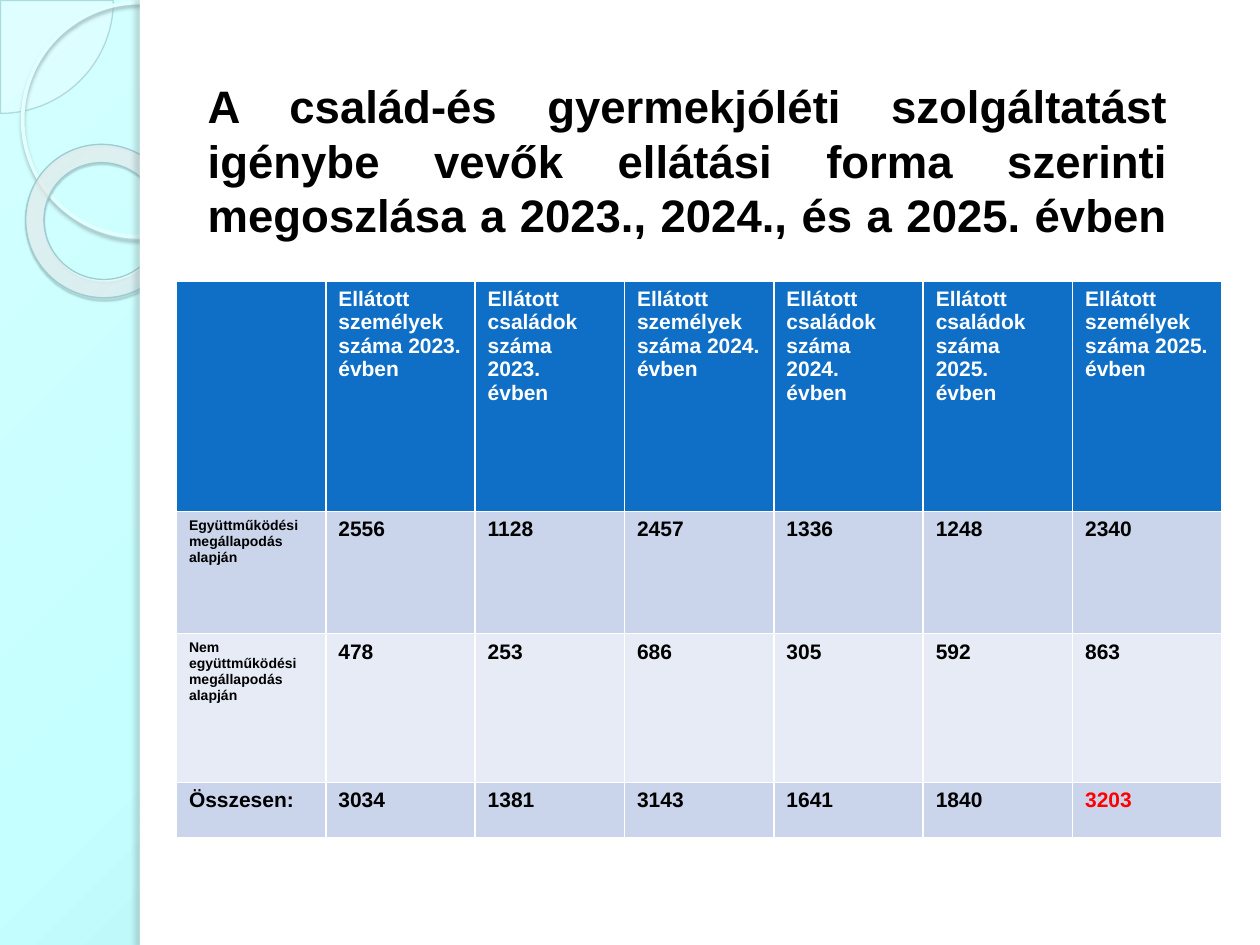
"""Build the slide on family and child welfare clients by form of care."""
from dataclasses import dataclass

from lxml import etree
from pptx import Presentation
from pptx import util as u
from pptx.dml.color import RGBColor
from pptx.enum import shapes, text
from pptx.oxml import ns


@dataclass(frozen=True)
class Theme:
    font: str = "Arial"
    title: float = 26
    body: float = 12
    small: float = 8
    black: str = "000000"
    white: str = "FFFFFF"
    red: str = "FF0000"
    head: str = "0F6FC6"
    bands: tuple = ("CAD4EA", "E6EBF5")
    back: tuple = ((0, "D4FFFF", 100), (40, "C5FFFF", 100), (100, "8FCBD3", 100))
    glass: tuple = ((0, "F7FEFE", 70), (70, "F9FEFF", 55), (100, "9CEEFD", 60))
    mist: tuple = ((0, "F5FEFF", 33), (100, "F5FEFF", 33))


def add(root, tag, **attrs):
    node = etree.SubElement(root, ns.qn(tag))
    for key, val in attrs.items():
        node.set(key, str(val))
    return node


def blend(root, stops):
    old = root.find(ns.qn("a:solidFill"))
    grad = add(root, "a:gradFill", rotWithShape=1)
    rows = add(grad, "a:gsLst")
    for pos, color, alpha in stops:
        stop = add(rows, "a:gs", pos=pos * 1000)
        tone = add(stop, "a:srgbClr", val=color)
        add(tone, "a:alpha", val=alpha * 1000)
    way = add(grad, "a:path", path="circle")
    add(way, "a:fillToRect", l=0, t=0, r=100000, b=100000)
    root.replace(old, grad)


theme = Theme()
deck = Presentation()
deck.slide_width, deck.slide_height = u.Inches(10), u.Inches(7.5)
slide = deck.slides.add_slide(deck.slide_layouts[6])
slide.background.fill.solid()
slide.background.fill.fore_color.rgb = RGBColor.from_string(theme.white)
blend(slide.element.find(".//" + ns.qn("p:bgPr")), theme.back)

kind = shapes.MSO_SHAPE
decor = [
    (kind.PIE, (-0.89, -0.89, 1.79, 1.79), (0, 54.02), 0, theme.mist, ("ADD9DF", 0.75), None),
    (kind.OVAL, (0.18, 0.02, 1.86, 1.86), (), 0, None, ("E2FFFF", 2.15), ("99B6BA", 85, 2, 2, 90)),
    (kind.DONUT, (0.2, 1.15, 1.23, 1.21), (0.12,), 38.6, theme.glass, ("9ECCD3", 0.75),
     ("465A5C", 35, 1, 1.2, 75)),
    (kind.RECTANGLE, (1.11, 0, 8.89, 7.5), (), 0, theme.white, None, None),
    (kind.RECTANGLE, (1.11, 0, 0.08, 7.5), (), 0, theme.white, None, ("687577", 25, 3, 3, 180)),
]
for form, place, bends, turn, fill, line, shade in decor:
    shape = slide.shapes.add_shape(form, *map(u.Inches, place))
    shape.rotation = turn
    for i, bend in enumerate(bends):
        shape.adjustments[i] = bend
    if fill is None:
        shape.fill.background()
    else:
        shape.fill.solid()
        shape.fill.fore_color.rgb = RGBColor.from_string(theme.white)
        if fill != theme.white:
            blend(shape.element.spPr, fill)
    if line:
        shape.line.color.rgb = RGBColor.from_string(line[0])
        shape.line.width = u.Pt(line[1])
    else:
        shape.line.fill.background()
    shape.shadow.inherit = False
    if shade:
        color, alpha, blur, dist, way = shade
        cast = add(shape.element.spPr.find(ns.qn("a:effectLst")), "a:outerShdw",
                   blurRad=u.Pt(blur), dist=u.Pt(dist), dir=way * 60000, rotWithShape=0)
        tone = add(cast, "a:srgbClr", val=color)
        add(tone, "a:alpha", val=alpha * 1000)

title = slide.shapes.add_textbox(*map(u.Inches, (1.55, 0.57, 7.82, 1.25)))
frame = title.text_frame
frame.word_wrap = True
frame.vertical_anchor = text.MSO_ANCHOR.TOP
para = frame.paragraphs[0]
para.alignment = text.PP_ALIGN.JUSTIFY
run = para.add_run()
run.text = ("A család-és gyermekjóléti szolgáltatást igénybe vevők ellátási forma szerinti "
            "megoszlása a 2023., 2024., és a 2025. évben")
run.font.name, run.font.size, run.font.bold = theme.font, u.Pt(theme.title), True
run.font.color.rgb = RGBColor.from_string(theme.black)
para.add_line_break()

heads = [""]
for group, year in [("személyek", 2023), ("családok", 2023), ("személyek", 2024),
                    ("családok", 2024), ("családok", 2025), ("személyek", 2025)]:
    gap = chr(160) + "\n" if group == "családok" else " "
    heads.append(f"Ellátott {group} száma {year}.{gap}évben")
data = [
    heads,
    ["Együttműködési megállapodás alapján", 2556, 1128, 2457, 1336, 1248, 2340],
    ["Nem együttműködési megállapodás alapján", 478, 253, 686, 305, 592, 863],
    ["Összesen:", 3034, 1381, 3143, 1641, 1840, 3203],
]
tall = (1.83, 0.97, 1.18, 0.44)
grid = slide.shapes.add_table(len(data), len(heads), u.Inches(1.4), u.Inches(2.23),
                              u.Inches(8.3), u.Inches(sum(tall))).table
for col in grid.columns:
    col.width = u.Inches(8.3 / len(heads))
for r, row in enumerate(data):
    grid.rows[r].height = u.Inches(tall[r])
    for c, item in enumerate(row):
        cell = grid.cell(r, c)
        cell.fill.solid()
        cell.fill.fore_color.rgb = RGBColor.from_string(theme.bands[(r - 1) % 2] if r else theme.head)
        ink = theme.black if r else theme.white
        if item == 3203:
            ink = theme.red
        size = theme.small if c == 0 and r in (1, 2) else theme.body
        for i, part in enumerate(str(item).split("\n")):
            para = cell.text_frame.add_paragraph() if i else cell.text_frame.paragraphs[0]
            if not part:
                continue
            run = para.add_run()
            run.text = part
            run.font.name, run.font.size, run.font.bold = theme.font, u.Pt(size), True
            run.font.color.rgb = RGBColor.from_string(ink)

deck.save("out.pptx")
